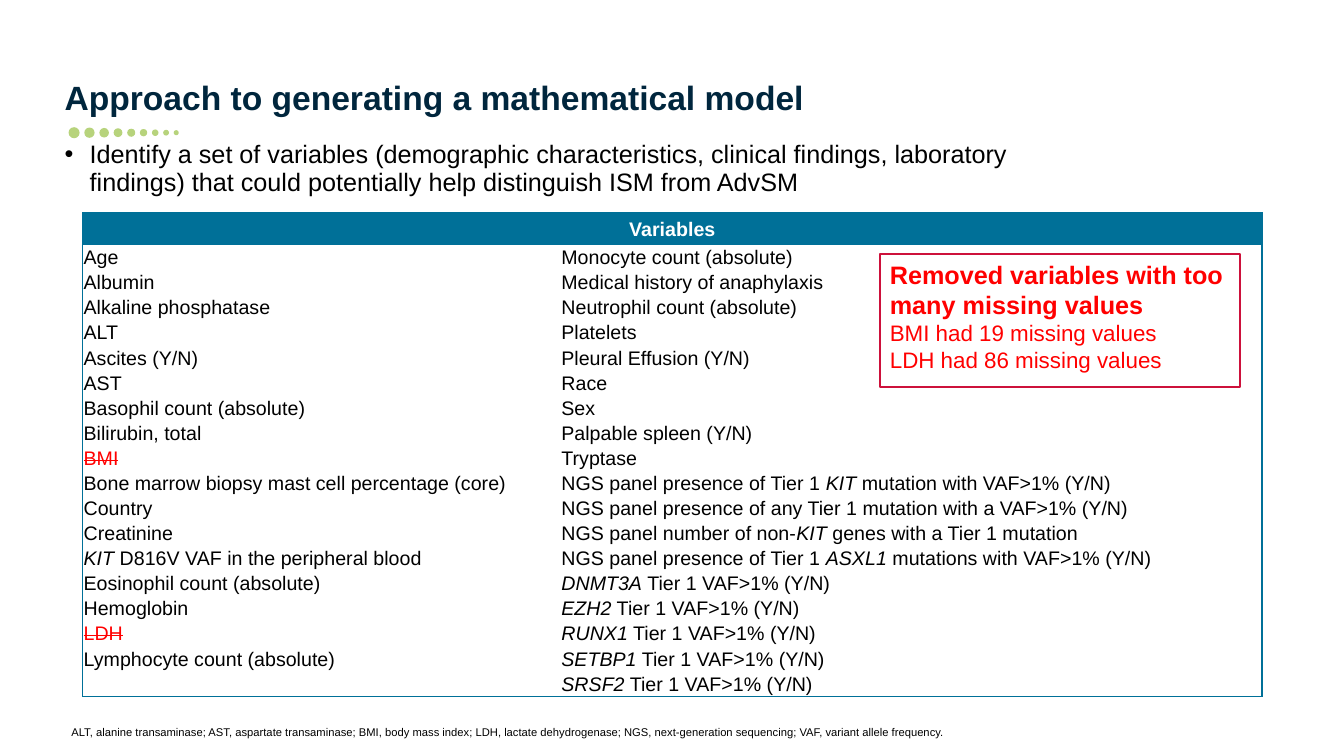
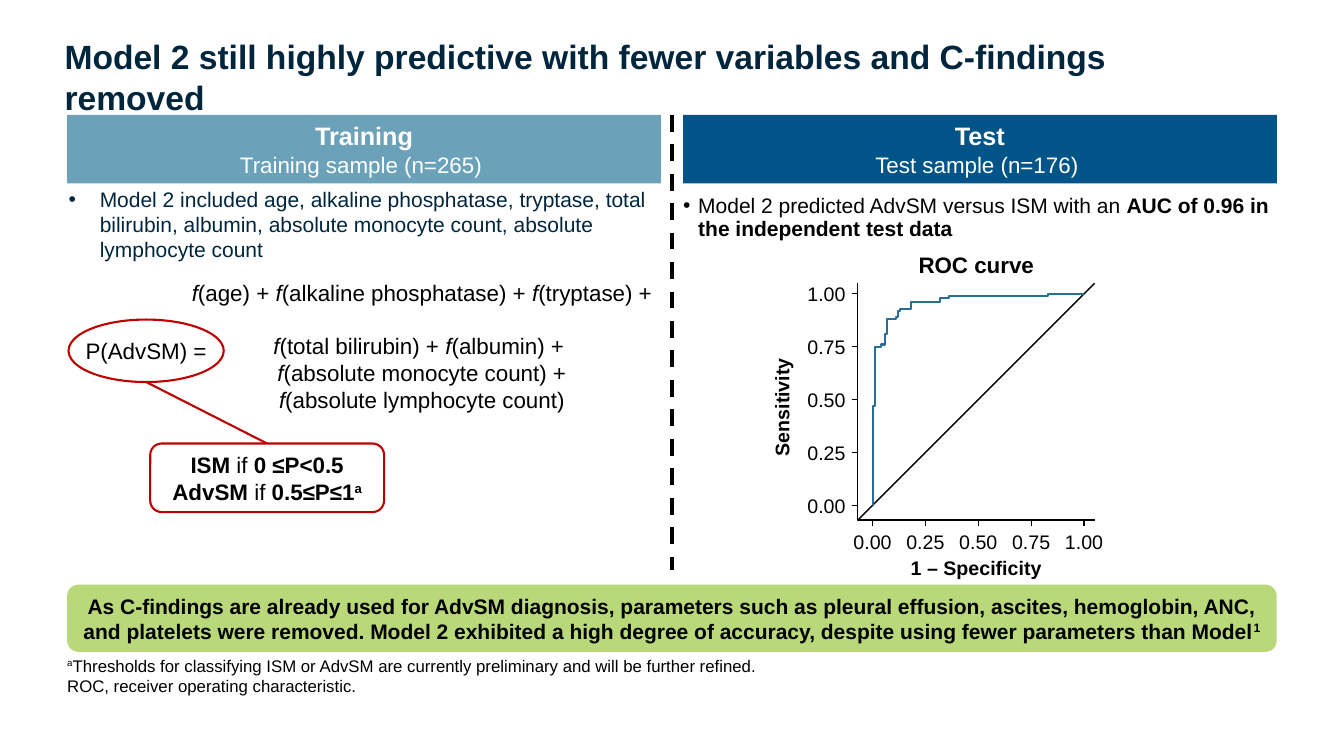
"""Build two slides on a predictive model: its candidate variables and its test result."""
from dataclasses import dataclass, replace
from typing import Any, NamedTuple, Optional

import pptx
import pptx.dml.color
import pptx.enum.dml
import pptx.enum.shapes
import pptx.enum.text
import pptx.oxml
import pptx.oxml.ns
import pptx.util
from lxml import etree

COLUMNS, ROWS = 40, 22.5
UNIT = pptx.util.Inches(1) / 3
FONT = "Arial"
NAVY, TEAL, RED, CRIMSON = "00263D", "007098", "FF0000", "C00000"
BLACK, WHITE, LIME = "000000", "FFFFFF", "B8D879"
PLAIN_TABLE_STYLE = "{2D5ABB26-0587-4C30-8999-92F81FD0307C}"
ALIGN = pptx.enum.text.PP_ALIGN
ANCHOR = pptx.enum.text.MSO_ANCHOR
SHAPE = pptx.enum.shapes.MSO_SHAPE


class Box(NamedTuple):
    left: float
    top: float
    width: float
    height: float


@dataclass(frozen=True)
class Run:
    text: str
    size: float = 14
    color: str = BLACK
    bold: bool = False
    italic: bool = False
    strike: bool = False
    superscript: bool = False


@dataclass(frozen=True)
class Paragraph:
    runs: list[Run]
    align: Any = ALIGN.LEFT
    spacing: float = 1.0
    before: float = 0
    indent: float = 0


@dataclass(frozen=True)
class Frame:
    anchor: Any = ANCHOR.TOP
    insets: tuple[float, float, float, float] = (0.1, 0.05, 0.1, 0.05)
    wrap: bool = True


class Band(NamedTuple):
    left: float
    fill: str
    heading: str
    sample: str


TITLE_BOX = Box(1.92, 1.53, 32.52, 2.19)
SHAPE_FRAME = Frame(ANCHOR.MIDDLE, (0.1, 0.04, 0.1, 0.04))

FIRST_VARIABLES = [
    "Age", "Albumin", "Alkaline phosphatase", "ALT", "Ascites (Y/N)", "AST",
    "Basophil count (absolute)", "Bilirubin, total", "BMI",
    "Bone marrow biopsy mast cell percentage (core)", "Country", "Creatinine",
    "*KIT* D816V VAF in the peripheral blood", "Eosinophil count (absolute)",
    "Hemoglobin", "LDH", "Lymphocyte count (absolute)", "",
]
SECOND_VARIABLES = [
    "Monocyte count (absolute)", "Medical history of anaphylaxis",
    "Neutrophil count (absolute)", "Platelets", "Pleural Effusion (Y/N)", "Race", "Sex",
    "Palpable spleen (Y/N)", "Tryptase",
    "NGS panel presence of Tier 1 *KIT* mutation with VAF>1% (Y/N)",
    "NGS panel presence of any Tier 1 mutation with a VAF>1% (Y/N)",
    "NGS panel number of non-*KIT* genes with a Tier 1 mutation",
    "NGS panel presence of Tier 1 *ASXL1* mutations with VAF>1% (Y/N)",
] + [f"*{gene}* Tier 1 VAF>1% (Y/N)" for gene in ("DNMT3A", "EZH2", "RUNX1", "SETBP1", "SRSF2")]
REMOVED_VARIABLES = {"BMI", "LDH"}

FORMULA_LINES = [
    "*f*(age) + *f*(alkaline phosphatase) + *f*(tryptase) +",
    "*f*(total bilirubin) + *f*(albumin) + ",
    "*f*(absolute monocyte count) +",
    "*f*(absolute lymphocyte count)",
]
BANDS = [
    Band(2, "6BA2B9", "Training", "Training sample (n=265) "),
    Band(20.33, "005487", "Test", "Test sample (n=176) "),
]
BAND_WIDTH = 17.67

PLOT = Box(25.53, 8.43, 7.05, 7.05)
AXIS_MIN, AXIS_MAX = -0.07, 1.05
ROC_STEPS = [
    (0, 0.47), (0.01, 0.75), (0.04, 0.76), (0.06, 0.81), (0.07, 0.88), (0.11, 0.89),
    (0.12, 0.92), (0.13, 0.93), (0.18, 0.96), (0.32, 0.98), (0.36, 0.99), (0.83, 1), (1, 1),
]


def color(value: str) -> pptx.dml.color.RGBColor:
    return pptx.dml.color.RGBColor.from_string(value)


def grid(value: float) -> int:
    return round(value * UNIT)


def place(box: Box) -> list[int]:
    return [grid(value) for value in box]


def marked(text: str, style: Run) -> list[Run]:
    parts = text.split("*")
    return [replace(style, text=part, italic=index % 2 == 1)
            for index, part in enumerate(parts) if part]


def add_run(paragraph: Any, item: Run) -> None:
    run = paragraph.add_run()
    run.text = item.text
    run.font.name = FONT
    run.font.size = pptx.util.Pt(item.size)
    run.font.bold = item.bold
    run.font.italic = item.italic
    run.font.color.rgb = color(item.color)
    properties = run._r.get_or_add_rPr()
    if item.strike:
        properties.set("strike", "sngStrike")
    if item.superscript:
        properties.set("baseline", "30000")


def write(text_frame: Any, items: list[Paragraph], frame: Frame) -> None:
    text_frame.auto_size = pptx.enum.text.MSO_AUTO_SIZE.NONE
    text_frame.word_wrap = frame.wrap
    text_frame.vertical_anchor = frame.anchor
    sides = ("margin_left", "margin_top", "margin_right", "margin_bottom")
    for side, inset in zip(sides, frame.insets):
        setattr(text_frame, side, pptx.util.Inches(inset))
    for index, item in enumerate(items):
        paragraph = text_frame.add_paragraph() if index else text_frame.paragraphs[0]
        paragraph.alignment = item.align
        paragraph.line_spacing = item.spacing
        paragraph.space_before = pptx.util.Pt(item.before)
        if item.indent:
            properties = paragraph._p.get_or_add_pPr()
            indent = pptx.util.Inches(item.indent)
            properties.set("marL", str(indent))
            properties.set("indent", str(-indent))
            etree.SubElement(properties, pptx.oxml.ns.qn("a:buFont"), typeface=FONT)
            etree.SubElement(properties, pptx.oxml.ns.qn("a:buChar"), char="•")
        for run in item.runs:
            add_run(paragraph, run)


def add_text(slide: Any, box: Box, items: list[Paragraph], frame: Frame = Frame()) -> Any:
    shape = slide.shapes.add_textbox(*place(box))
    write(shape.text_frame, items, frame)
    return shape


def paint(shape: Any, fill: Optional[str], line: Optional[str], width: float = 1.5) -> None:
    shape.shadow.inherit = False
    if fill:
        shape.fill.solid()
        shape.fill.fore_color.rgb = color(fill)
    else:
        shape.fill.background()
    if line:
        shape.line.color.rgb = color(line)
        shape.line.width = pptx.util.Pt(width)
    else:
        shape.line.fill.background()


def add_shape(slide: Any, kind: Any, box: Box, fill: Optional[str] = None,
              line: Optional[str] = None, items: Optional[list[Paragraph]] = None,
              frame: Frame = SHAPE_FRAME) -> None:
    shape = slide.shapes.add_shape(kind, *place(box))
    paint(shape, fill, line)
    if items:
        write(shape.text_frame, items, frame)


def add_outline(slide: Any, points: list[tuple[float, float]], line: str, width: float) -> None:
    start, *others = [(grid(x), grid(y)) for x, y in points]
    builder = slide.shapes.build_freeform(*start)
    builder.add_line_segments(others, close=False)
    paint(builder.convert_to_shape(), None, line, width)


def add_line(slide: Any, start: tuple[float, float], end: tuple[float, float],
             line: str, width: float, dashed: bool = False) -> None:
    connector = slide.shapes.add_connector(
        pptx.enum.shapes.MSO_CONNECTOR.STRAIGHT, *[grid(value) for value in start + end])
    connector.line.color.rgb = color(line)
    connector.line.width = pptx.util.Pt(width)
    if dashed:
        connector.line.dash_style = pptx.enum.dml.MSO_LINE.DASH
    etree.SubElement(connector._element.spPr, pptx.oxml.ns.qn("a:effectLst"))


def add_slide(presentation: Any, title: str) -> Any:
    slide = presentation.slides.add_slide(presentation.slide_layouts[5])
    shape = slide.shapes.title
    shape.left, shape.top, shape.width, shape.height = place(TITLE_BOX)
    write(shape.text_frame, [Paragraph([Run(title, 24, NAVY, True)])],
          Frame(ANCHOR.BOTTOM, (0, 0.04, 0, 0.08)))
    return slide


def format_cell(cell: Any, runs: list[Run], align: Any, borders: str, fill: Optional[str]) -> None:
    properties = cell._tc.get_or_add_tcPr()
    for side in borders:
        properties.append(pptx.oxml.parse_xml(
            f'<a:ln{side} {pptx.oxml.ns.nsdecls("a")} w="12700"><a:solidFill>'
            f'<a:srgbClr val="{TEAL}"/></a:solidFill></a:ln{side}>'))
    if fill:
        cell.fill.solid()
        cell.fill.fore_color.rgb = color(fill)
    else:
        cell.fill.background()
    cell.vertical_anchor = ANCHOR.MIDDLE
    cell.margin_left = cell.margin_right = cell.margin_top = pptx.util.Inches(0.01)
    cell.margin_bottom = 0
    paragraph = cell.text_frame.paragraphs[0]
    paragraph.alignment = align
    for run in runs:
        add_run(paragraph, run)
    if not runs:
        etree.SubElement(paragraph._p, pptx.oxml.ns.qn("a:endParaRPr"), sz="1400")


def add_variables_table(slide: Any, box: Box) -> None:
    variables = list(zip(FIRST_VARIABLES, SECOND_VARIABLES))
    table = slide.shapes.add_table(len(variables) + 1, 2, *place(box)).table
    table.first_row = table.horz_banding = False
    table._tbl.tblPr.find(pptx.oxml.ns.qn("a:tableStyleId")).text = PLAIN_TABLE_STYLE
    table.columns[0].width, table.columns[1].width = grid(14.22), grid(box.width - 14.22)
    header_height = 0.96
    for index, row in enumerate(table.rows):
        row.height = grid((box.height - header_height) / len(variables) if index else header_height)
    table.cell(0, 0).merge(table.cell(0, 1))
    format_cell(table.cell(0, 0), [Run("Variables", 14, WHITE, True)], ALIGN.CENTER, "LRT", TEAL)
    format_cell(table.cell(0, 1), [], ALIGN.CENTER, "RT", TEAL)
    for row_index, names in enumerate(variables, 1):
        bottom = "B" if row_index == len(variables) else ""
        for column_index, name in enumerate(names):
            style = Run("", color=RED, strike=True) if name in REMOVED_VARIABLES else Run("")
            format_cell(table.cell(row_index, column_index), marked(name, style),
                        ALIGN.LEFT, "LR"[column_index] + bottom, None)


def add_dots(slide: Any) -> None:
    left, middle, gap = 2.04, 3.95, 0.14
    for index in range(9):
        diameter = 0.33 - 0.18 * index / 8
        add_shape(slide, SHAPE.OVAL, Box(left, middle - diameter / 2, diameter, diameter), "B7D37C")
        left += diameter + gap


def plot_point(x: float, y: float) -> tuple[float, float]:
    scale = PLOT.width / (AXIS_MAX - AXIS_MIN)
    return PLOT.left + (x - AXIS_MIN) * scale, PLOT.top + (AXIS_MAX - y) * scale


def add_roc_curve(slide: Any) -> None:
    corner = plot_point(AXIS_MIN, AXIS_MIN)
    add_outline(slide, [plot_point(AXIS_MIN, AXIS_MAX), corner, plot_point(AXIS_MAX, AXIS_MIN)],
                BLACK, 1)
    add_line(slide, corner, plot_point(AXIS_MAX, AXIS_MAX), BLACK, 1)
    points, sensitivity = [], 0.0
    for x, y in ROC_STEPS:
        points += [plot_point(x, sensitivity), plot_point(x, y)]
        sensitivity = y
    add_outline(slide, points, "286D96", 1.5)


def add_roc_labels(slide: Any) -> None:
    bottom, tick = PLOT.top + PLOT.height, 0.18
    for value in (0, 0.25, 0.5, 0.75, 1):
        x, y = plot_point(value, value)
        add_line(slide, (PLOT.left - tick, y), (PLOT.left, y), BLACK, 1)
        add_line(slide, (x, bottom + tick), (x, bottom), BLACK, 1)
        label = [Run(f"{value:.2f}")]
        add_text(slide, Box(PLOT.left - 2.1, y - 0.36, 2.1, 0.72), [Paragraph(label, ALIGN.RIGHT)],
                 Frame(ANCHOR.MIDDLE, (0, 0, 0.12, 0)))
        add_text(slide, Box(x - 0.75, bottom, 1.5, 1), [Paragraph(label, ALIGN.CENTER)],
                 Frame(insets=(0, 0.1, 0, 0)))
    add_text(slide, Box(PLOT.left, 7.41, PLOT.width, 1.02),
             [Paragraph([Run("ROC curve", 16, bold=True)], ALIGN.CENTER, 0.9)])
    add_text(slide, Box(PLOT.left, 16.56, PLOT.width, 0.72),
             [Paragraph([Run("1 – Specificity", bold=True)], ALIGN.CENTER)], Frame(insets=(0, 0, 0, 0)))
    add_text(slide, Box(19.89, 11.61, 6.72, 1.02),
             [Paragraph([Run("Sensitivity", bold=True)], ALIGN.CENTER)],
             Frame(ANCHOR.BOTTOM)).rotation = 270


def build_variables_slide(presentation: Any) -> None:
    slide = add_slide(presentation, "Approach to generating a mathematical model")
    add_dots(slide)
    add_text(slide, Box(1.92, 4.11, 29.34, 1.74), [Paragraph([Run(
        "Identify a set of variables (demographic characteristics, clinical findings, laboratory "
        "findings) that could potentially help distinguish ISM from AdvSM", 18)],
        spacing=0.9, indent=0.25)], Frame(ANCHOR.BOTTOM, (0, 0, 0, 0)))
    add_variables_table(slide, Box(2.46, 6.33, 35.1, 14.4))
    add_shape(slide, SHAPE.RECTANGLE, Box(26.19, 7.56, 10.71, 3.96), None, "CD113B", [
        Paragraph([Run("Removed variables with too many missing values", 18, RED, True)]),
        Paragraph([Run("BMI had 19 missing values", 16, RED)]),
        Paragraph([Run("LDH had 86 missing values", 16, RED)])], Frame())
    add_text(slide, Box(1.83, 21.45, 36, 0.72), [Paragraph([Run(
        "ALT, alanine transaminase; AST, aspartate transaminase; BMI, body mass index; LDH, lactate "
        "dehydrogenase; NGS, next-generation sequencing; VAF, variant allele frequency.", 8)])])


def build_result_slide(presentation: Any) -> None:
    slide = add_slide(
        presentation, "Model 2 still highly predictive with fewer variables and C-findings removed")
    for band in BANDS:
        add_shape(slide, SHAPE.RECTANGLE, Box(band.left, 3.42, BAND_WIDTH, 2.04), band.fill, None, [
            Paragraph([Run(band.heading, 18, WHITE, True)], ALIGN.CENTER),
            Paragraph([Run(band.sample, 16, WHITE)], ALIGN.CENTER)])
    add_line(slide, (COLUMNS / 2, 3.42), (COLUMNS / 2, 16.95), BLACK, 3, True)
    add_text(slide, Box(2.04, 5.16, BAND_WIDTH, 2.64), [Paragraph([Run(
        "Model 2 included age, alkaline phosphatase, tryptase, total bilirubin, albumin, absolute "
        "monocyte count, absolute lymphocyte count", 15, NAVY)], indent=0.31)],
        Frame(ANCHOR.BOTTOM, (0, 0.12, 0, 0)))
    add_text(slide, Box(20.33, 5.46, BAND_WIDTH, 1.86), [Paragraph([
        Run("Model 2 predicted AdvSM versus ISM with an ", 15),
        Run("AUC of 0.96 in the independent test data", 15, bold=True)],
        spacing=0.9, indent=0.15)], Frame(insets=(0, 0.12, 0, 0.05)))
    add_text(slide, Box(5.34, 8.52, 14.43, 3.54), [
        Paragraph(marked(line, Run("", 16)), ALIGN.CENTER, before=19 if index == 1 else 0)
        for index, line in enumerate(FORMULA_LINES)], Frame(ANCHOR.MIDDLE))
    add_line(slide, (4.35, 11.37), (7.95, 13.2), CRIMSON, 1.5)
    add_shape(slide, SHAPE.OVAL, Box(2.04, 9.51, 4.62, 1.86), None, CRIMSON,
              [Paragraph([Run("P(AdvSM) =", 16)], ALIGN.CENTER)], replace(SHAPE_FRAME, wrap=False))
    plain, strong = Run("if", 16), Run("", 16, bold=True)
    add_shape(slide, SHAPE.ROUNDED_RECTANGLE, Box(4.47, 13.2, 6.96, 2.04), WHITE, CRIMSON, [
        Paragraph([replace(strong, text="ISM "), plain, replace(strong, text=" 0 ≤P<0.5")],
                  ALIGN.CENTER),
        Paragraph([replace(strong, text="AdvSM "), plain, replace(strong, text=" 0.5≤P≤1"),
                   replace(strong, text="a", superscript=True)], ALIGN.CENTER)])
    add_roc_curve(slide)
    add_roc_labels(slide)
    add_shape(slide, SHAPE.ROUNDED_RECTANGLE, Box(2, 17.4, 36, 2), LIME, None, [Paragraph([
        Run("As C-findings are already used for AdvSM diagnosis, parameters such as pleural effusion, "
            "ascites, hemoglobin, ANC, and platelets were removed. Model 2 exhibited a high degree of "
            "accuracy, despite using fewer parameters than Model", 15, bold=True),
        Run("1", 15, bold=True, superscript=True)], ALIGN.CENTER)],
        Frame(ANCHOR.MIDDLE, (0.08, 0.05, 0.08, 0.05)))
    add_text(slide, Box(2, 19.35, 34.23, 1.5), [
        Paragraph([Run("a", 12, superscript=True), Run(
            "Thresholds for classifying ISM or AdvSM are currently preliminary and will be further "
            "refined.", 12)]),
        Paragraph([Run("ROC, receiver operating characteristic.", 12)])],
        Frame(ANCHOR.BOTTOM, (0, 0.05, 0, 0.05)))


def main() -> None:
    presentation = pptx.Presentation()
    presentation.slide_width, presentation.slide_height = grid(COLUMNS), grid(ROWS)
    build_variables_slide(presentation)
    build_result_slide(presentation)
    presentation.save("out.pptx")


if __name__ == "__main__":
    main()
